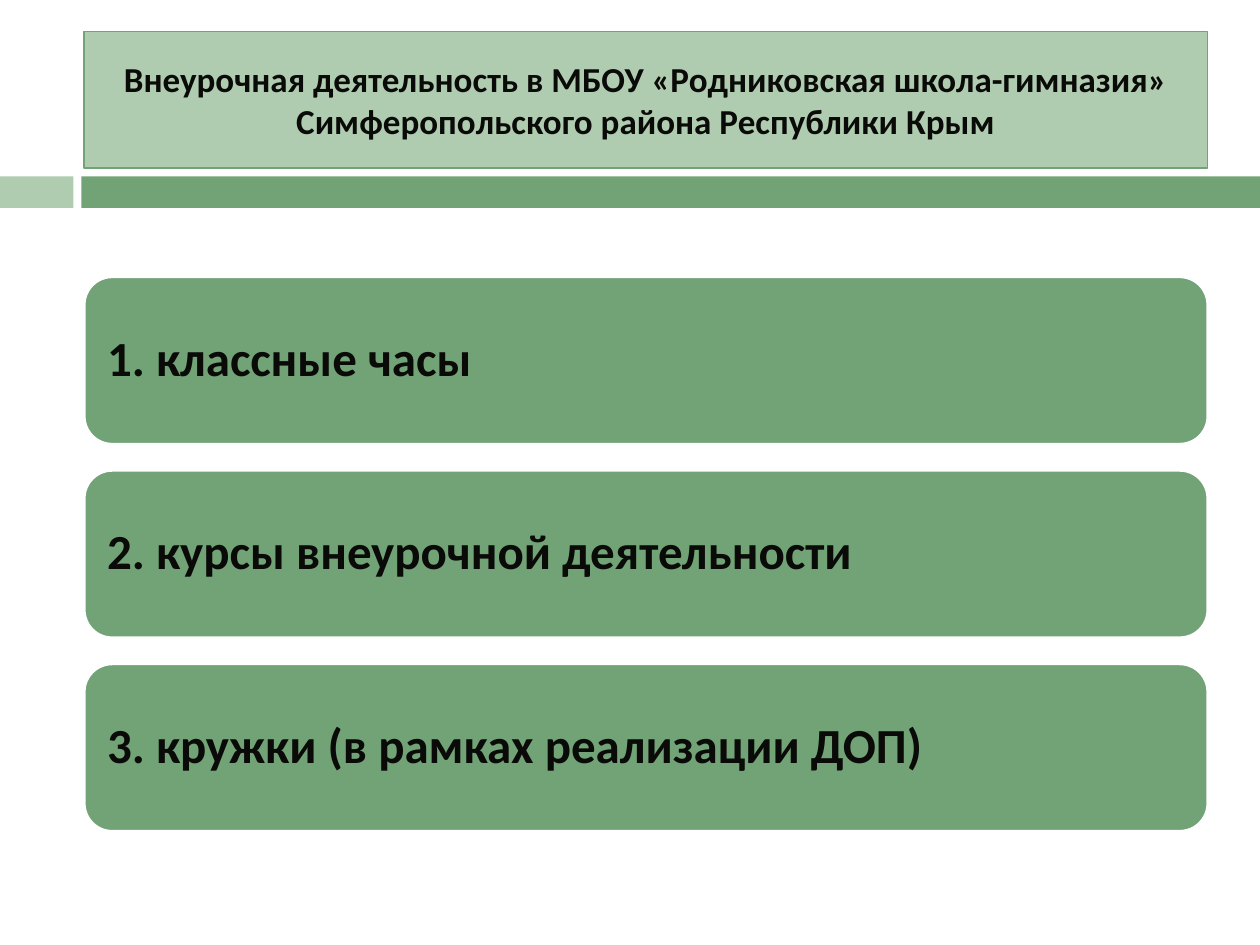
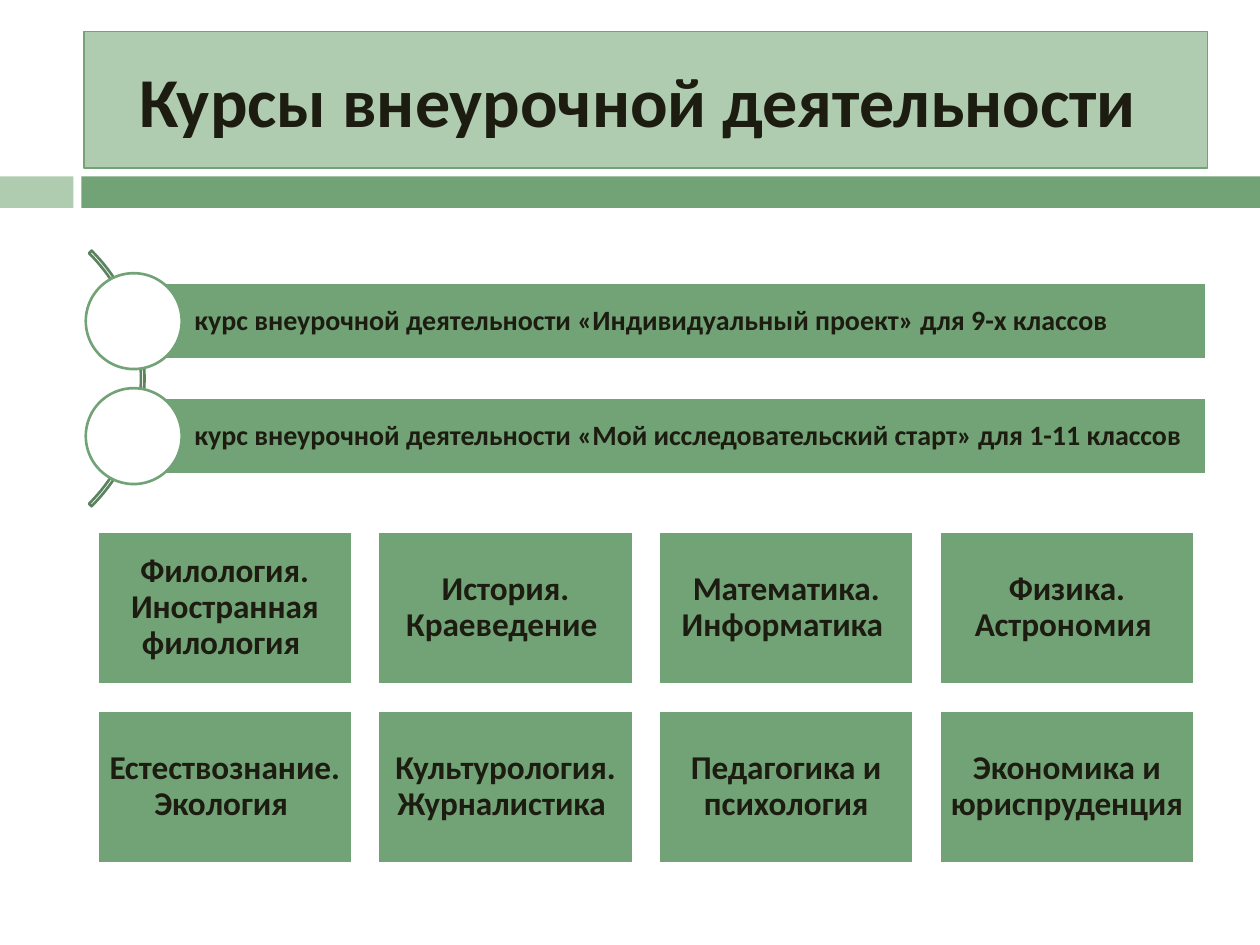
from pptx import Presentation
from pptx.dml.color import RGBColor
from pptx.enum import shapes, text
from pptx.util import Pt

GREEN, PALE, DARK, WHITE = "72A376", "B0CCB0", "5B835E", "FFFFFF"
BLACK, OLIVE = "0A0B08", "1C1C11"
FONT = "Calibri"
KIND = shapes.MSO_SHAPE
LEFT, MID = text.PP_ALIGN.LEFT, text.PP_ALIGN.CENTER

FORMS = [
    "1. классные часы",
    "2. курсы внеурочной деятельности",
    "3. кружки (в рамках реализации ДОП)",
]
COURSES = [
    "курс внеурочной деятельности «Индивидуальный проект» для 9-х классов",
    "курс внеурочной деятельности «Мой исследовательский старт» для 1-11 классов",
]
FIELDS = [
    "Филология. Иностранная филология ",
    "История. Краеведение ",
    "Математика. Информатика ",
    "Физика. Астрономия ",
    "Естествознание. Экология ",
    "Культурология. Журналистика ",
    "Педагогика и психология",
    "Экономика и юриспруденция",
]


def color(code):
    return RGBColor.from_string(code)


def paint(shape, fill, line=None, width=1.5):
    """Set fill and outline; None means there is none."""
    if fill:
        shape.fill.solid()
        shape.fill.fore_color.rgb = color(fill)
    else:
        shape.fill.background()
    if line:
        shape.line.color.rgb = color(line)
        shape.line.width = Pt(width)
    else:
        shape.line.fill.background()


def draw(slide, kind, box, fill, line=None):
    shape = slide.shapes.add_shape(kind, *map(Pt, box))
    shape.shadow.inherit = False
    paint(shape, fill, line)
    return shape


def write(shape, words, size, ink, align, pads, space=0.9):
    """Put one bold paragraph in a shape; pads are left, top, right, bottom."""
    frame = shape.text_frame
    frame.word_wrap = True
    frame.auto_size = text.MSO_AUTO_SIZE.NONE
    frame.vertical_anchor = text.MSO_ANCHOR.MIDDLE
    (frame.margin_left, frame.margin_top,
     frame.margin_right, frame.margin_bottom) = map(Pt, pads)
    para = frame.paragraphs[0]
    para.alignment = align
    para.line_spacing = space
    run = para.add_run()
    run.text = words
    run.font.name = FONT
    run.font.size = Pt(size)
    run.font.bold = True
    run.font.color.rgb = color(ink)


def start(deck, words, size, ink):
    """Add a slide with its title panel and the two bands below it."""
    slide = deck.slides.add_slide(deck.slide_layouts[5])
    title = slide.shapes.title
    title.left, title.top, title.width, title.height = map(Pt, (48, 18, 642, 78))
    paint(title, PALE, GREEN, 0.75)
    write(title, words, size, ink, MID, (7.2, 3.6, 7.2, 3.6), 1)
    draw(slide, KIND.RECTANGLE, (0, 100.8, 42, 18), PALE)
    draw(slide, KIND.RECTANGLE, (46.5, 100.8, 673.5, 18), GREEN)
    return slide


def list_forms(slide):
    for row, words in enumerate(FORMS):
        box = (48.2, 158.2 + 110.6 * row, 642, 95.6)
        card = draw(slide, KIND.ROUNDED_RECTANGLE, box, GREEN, WHITE)
        write(card, words, 28, BLACK, LEFT, [8.4] * 4)


def list_courses(slide):
    arc = draw(slide, KIND.BLOCK_ARC, (-124, 113, 206.6, 206.6), None, DARK)
    for spot, value in enumerate((189, 27, 0.01)):
        arc.adjustments[spot] = value
    for row, words in enumerate(COURSES):
        top = 161.6 + 65.7 * row
        bar = draw(slide, KIND.RECTANGLE, (76.4, top, 612.8, 43.8), GREEN, WHITE)
        write(bar, words, 16, OLIVE, LEFT, (34.7, 3, 3, 3))
        draw(slide, KIND.OVAL, (49, top - 5.5, 54.8, 54.8), WHITE, GREEN)


def tile_fields(slide):
    for spot, words in enumerate(FIELDS):
        row, col = divmod(spot, 4)
        box = (55.7 + 160.4 * col, 303.8 + 102.2 * row, 145.6, 87.2)
        tile = draw(slide, KIND.RECTANGLE, box, GREEN, WHITE)
        write(tile, words, 19, OLIVE, MID, [5.7] * 4)


def main():
    deck = Presentation()
    deck.slide_width, deck.slide_height = Pt(720), Pt(540)
    list_forms(start(deck, "Внеурочная деятельность в МБОУ «Родниковская "
                     "школа-гимназия» Симферопольского района Республики Крым",
                     20, BLACK))
    slide = start(deck, "Курсы внеурочной деятельности ", 40, OLIVE)
    list_courses(slide)
    tile_fields(slide)
    deck.save("out.pptx")


if __name__ == "__main__":
    main()
